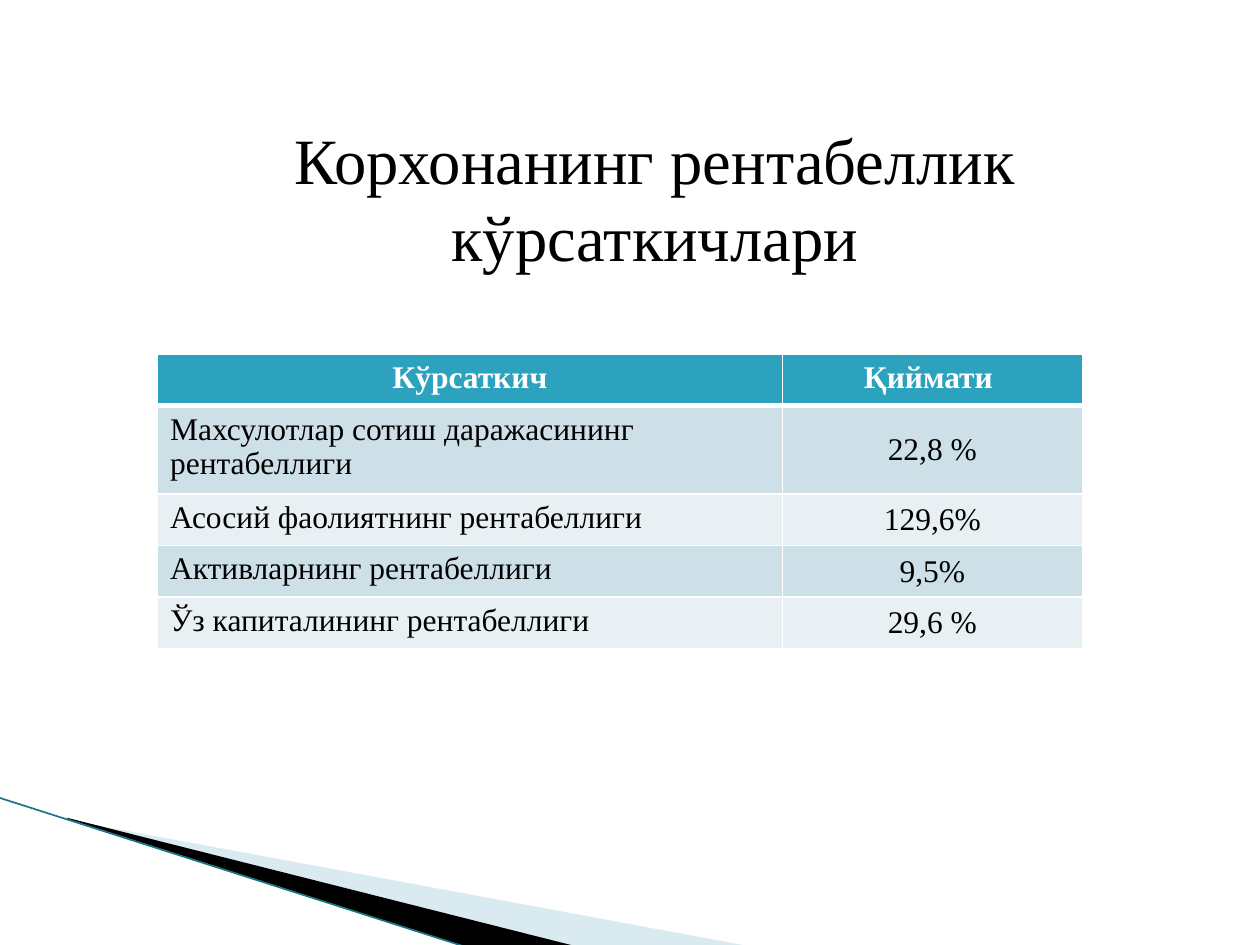
from dataclasses import dataclass
from typing import Any, Optional

from lxml.etree import SubElement as Sub
from pptx import Presentation
from pptx.dml.color import RGBColor as Rgb
from pptx.enum.shapes import MSO_CONNECTOR as Link
from pptx.enum.text import MSO_ANCHOR as Anchor, PP_ALIGN as Align
from pptx.oxml.ns import qn
from pptx.util import Inches, Pt

HUES = {
    "black": "000000",
    "white": "FFFFFF",
    "head": "2DA2BF",
    "band": "CDE0E8",
    "pale": "E8F0F4",
    "sky": "A0CBDC",
    "teal": "1B7587",
}
FACE = "Times New Roman"


@dataclass
class Wedge:
    points: list[tuple[float, float]]
    hue: str
    alpha: Optional[int] = None


@dataclass
class Row:
    label: str
    value: str


WEDGES = [
    Wedge([(0.55, 6.51), (5.95, 7.51), (4.56, 7.51), (0.55, 6.5)], "sky", 40),
    Wedge([(0.53, 6.49), (4.57, 7.51), (3.72, 7.52), (0.54, 6.5)], "black"),
]
ROWS = [
    Row("Кўрсаткич", "Қиймати "),
    Row("Махсулотлар сотиш даражасининг рентабеллиги", "22,8 %"),
    Row("Асосий фаолиятнинг рентабеллиги", "129,6%"),
    Row("Активларнинг рентабеллиги", "9,5%"),
    Row("Ўз капиталининг рентабеллиги", "29,6 %"),
]
COLS = [4.96, 2.38]
TALL = 0.41


def tint(name: str) -> Rgb:
    return Rgb.from_string(HUES[name])


def apply(item: Any, values: dict[str, Any]) -> None:
    for key, value in values.items():
        setattr(item, key, value)


def write(frame: Any, text: str, size: float, hue: str, align: Any, bold: bool = False) -> None:
    para = frame.paragraphs[0]
    para.alignment = align
    run = para.add_run()
    run.text = text
    apply(run.font, {"name": FACE, "size": Pt(size), "bold": bold})
    run.font.color.rgb = tint(hue)


def draw_wedge(slide: Any, wedge: Wedge) -> None:
    first, *rest = [(Inches(x), Inches(y)) for x, y in wedge.points]
    pen = slide.shapes.build_freeform(*first, scale=1.0)
    pen.add_line_segments(rest, close=True)
    shape = pen.convert_to_shape()
    shape.shadow.inherit = False
    shape.line.fill.background()
    shape.fill.solid()
    shape.fill.fore_color.rgb = tint(wedge.hue)
    if wedge.alpha is not None:
        color = next(shape.element.spPr.iter(qn("a:srgbClr")))
        Sub(color, qn("a:alpha"), val=str(wedge.alpha * 1000))


def draw_edge(slide: Any) -> None:
    ends = [Inches(n) for n in (-0.01, 6.33, 3.71, 7.52)]
    edge = slide.shapes.add_connector(Link.STRAIGHT, *ends)
    edge.line.width = Pt(0.95)
    edge.line.color.rgb = tint("teal")
    Sub(edge.element.spPr, qn("a:effectLst"))


def draw_title(slide: Any) -> None:
    box = slide.shapes.add_textbox(Inches(0.7), Inches(0.94), Inches(9), Inches(1.25))
    apply(box.text_frame, {"word_wrap": True, "vertical_anchor": Anchor.MIDDLE})
    write(box.text_frame, "Корхонанинг рентабеллик кўрсаткичлари", 36.9, "black", Align.CENTER)


def rule(cell: Any, sides: dict[str, float]) -> None:
    props = cell._tc.get_or_add_tcPr()
    for side, width in sides.items():
        line = Sub(props, qn(f"a:ln{side}"), w=str(Pt(width)))
        fill = Sub(line, qn("a:solidFill"))
        Sub(fill, qn("a:srgbClr"), val=HUES["white"])


def draw_cell(cell: Any, text: str, row: int, col: int) -> None:
    head = row == 0
    rule(cell, {"L": 1, "R": 1, "T": 3 if row == 1 else 1, "B": 3 if head else 1})
    cell.fill.solid()
    cell.fill.fore_color.rgb = tint("head" if head else "band" if row % 2 else "pale")
    cell.vertical_anchor = Anchor.MIDDLE if col and not head else Anchor.TOP
    align = Align.CENTER if col or head else Align.LEFT
    write(cell.text_frame, text, 18, "white" if head else "black", align, head)


def draw_table(slide: Any) -> None:
    size = Inches(sum(COLS)), Inches(TALL * len(ROWS))
    frame = slide.shapes.add_table(len(ROWS), len(COLS), Inches(1.25), Inches(2.81), *size)
    table = frame.table
    for col, width in zip(table.columns, COLS):
        col.width = Inches(width)
    for i, row in enumerate(ROWS):
        table.rows[i].height = Inches(TALL)
        for j, text in enumerate((row.label, row.value)):
            draw_cell(table.cell(i, j), text, i, j)


def main() -> None:
    deck = Presentation()
    apply(deck, {"slide_width": Inches(10), "slide_height": Inches(7.5)})
    slide = deck.slides.add_slide(deck.slide_layouts[6])
    for wedge in WEDGES:
        draw_wedge(slide, wedge)
    draw_edge(slide)
    draw_title(slide)
    draw_table(slide)
    deck.save("out.pptx")


if __name__ == "__main__":
    main()
